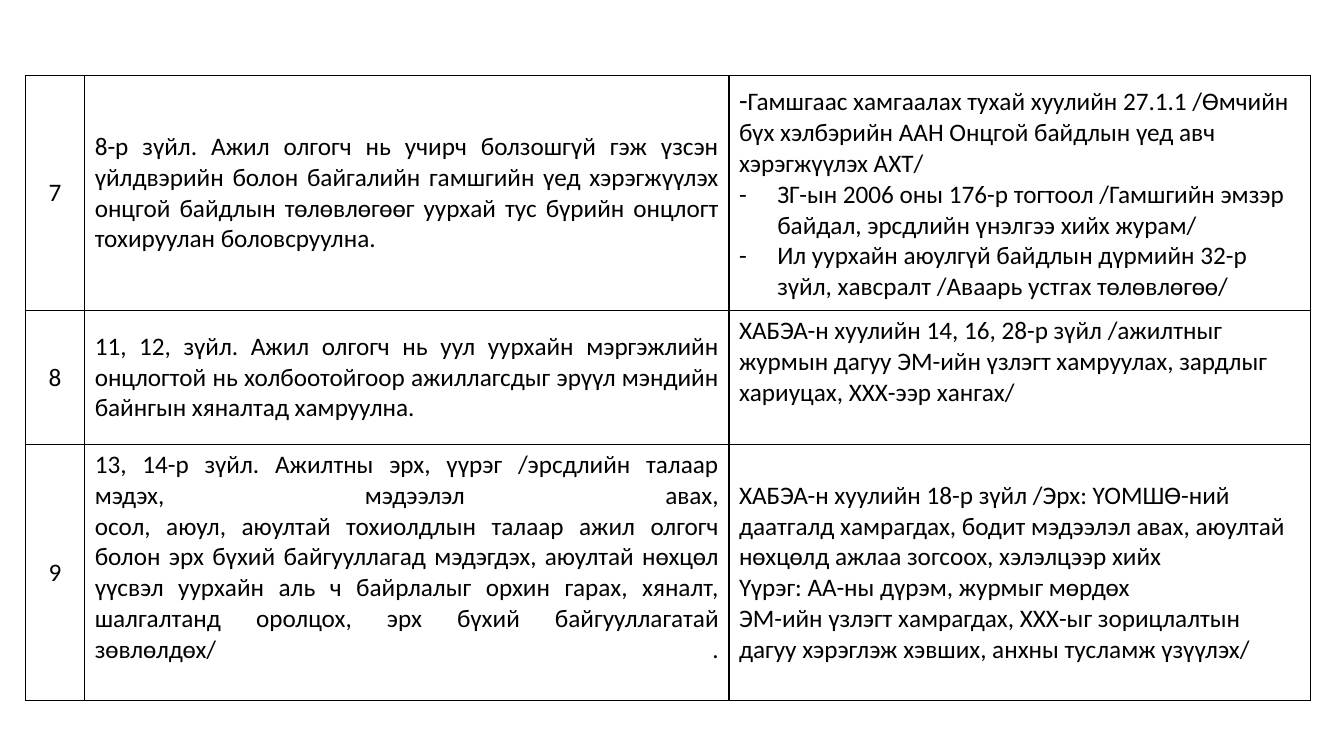
from dataclasses import dataclass

from lxml.etree import SubElement
from pptx import Presentation
from pptx.dml.color import RGBColor
from pptx.enum.text import MSO_ANCHOR as Anchor, PP_ALIGN as Align
from pptx.oxml import parse_xml
from pptx.oxml.ns import nsdecls, qn
from pptx.table import Table, _Cell as Cell
from pptx.text.text import _Paragraph as Paragraph
from pptx.util import Inches, Pt


@dataclass(frozen=True)
class Theme:
    font: str = "Calibri"
    ink: str = "000000"
    paper: str = "FFFFFF"
    body_size: float = 18
    dash_size: float = 20
    border_width: float = 1
    bullet_indent: float = 0.38


@dataclass(frozen=True)
class Line:
    text: str
    bullet: bool = False
    lead: str = ""  # larger characters before the text


@dataclass(frozen=True)
class LawRow:
    number: str
    height: float
    clause: str
    references: tuple[Line, ...]
    reference_anchor: Anchor = Anchor.MIDDLE


THEME = Theme()

# Grid in inches
SLIDE_WIDTH, SLIDE_HEIGHT = 13.33, 7.5
TABLE_LEFT, TABLE_TOP = 0.25, 0.75
COLUMN_WIDTHS = (0.59, 6.39, 5.77)

# Content
ROWS = (
    LawRow(
        "7", 2.33,
        "8-р зүйл. Ажил олгогч нь учирч болзошгүй гэж үзсэн үйлдвэрийн болон "
        "байгалийн гамшгийн үед хэрэгжүүлэх онцгой байдлын төлөвлөгөөг уурхай "
        "тус бүрийн онцлогт тохируулан боловсруулна.",
        (
            Line("Гамшгаас хамгаалах тухай хуулийн 27.1.1 /Өмчийн бүх хэлбэрийн "
                 "ААН Онцгой байдлын үед авч хэрэгжүүлэх АХТ/", lead="-"),
            Line("ЗГ-ын 2006 оны 176-р тогтоол /Гамшгийн эмзэр байдал, эрсдлийн "
                 "үнэлгээ хийх журам/", bullet=True),
            Line("Ил уурхайн аюулгүй байдлын дүрмийн 32-р зүйл, хавсралт "
                 "/Аваарь устгах төлөвлөгөө/", bullet=True),
        ),
    ),
    LawRow(
        "8", 1.33,
        "11, 12, зүйл. Ажил олгогч нь уул уурхайн мэргэжлийн онцлогтой нь "
        "холбоотойгоор ажиллагсдыг эрүүл мэндийн байнгын хяналтад хамруулна.",
        (
            Line("ХАБЭА-н хуулийн 14, 16, 28-р зүйл /ажилтныг журмын дагуу "
                 "ЭМ-ийн үзлэгт хамруулах, зардлыг хариуцах, ХХХ-ээр хангах/"),
        ),
        reference_anchor=Anchor.TOP,
    ),
    LawRow(
        "9", 2.54,
        "13, 14-р зүйл. Ажилтны эрх, үүрэг /эрсдлийн талаар мэдэх, мэдээлэл авах,\n"
        "осол, аюул, аюултай тохиолдлын талаар ажил олгогч болон эрх бүхий "
        "байгууллагад мэдэгдэх, аюултай нөхцөл үүсвэл уурхайн аль ч байрлалыг "
        "орхин гарах, хяналт, шалгалтанд оролцох, эрх бүхий байгууллагатай "
        "зөвлөлдөх/ .\n",
        (
            Line("ХАБЭА-н хуулийн 18-р зүйл /Эрх: ҮОМШӨ-ний даатгалд хамрагдах, "
                 "бодит мэдээлэл авах, аюултай нөхцөлд ажлаа зогсоох, хэлэлцээр хийх"),
            Line("Үүрэг: АА-ны дүрэм, журмыг мөрдөх"),
            Line("ЭМ-ийн үзлэгт хамрагдах, ХХХ-ыг зорицлалтын дагуу хэрэглэж "
                 "хэвших, анхны тусламж үзүүлэх/"),
        ),
    ),
)


def add_text(paragraph: Paragraph, text: str, *, size: float = THEME.body_size,
             color: str = THEME.ink, font: str = THEME.font) -> None:
    """Add formatted text; a newline becomes a line break."""
    for index, part in enumerate(text.split("\n")):
        if index:
            paragraph.add_line_break()
        if part:
            run = paragraph.add_run()
            run.text = part
            run.font.size = Pt(size)
            run.font.name = font
            run.font.color.rgb = RGBColor.from_string(color)


def add_bullet(paragraph: Paragraph) -> None:
    properties = paragraph._p.get_or_add_pPr()
    indent = Inches(THEME.bullet_indent)
    properties.set("marL", str(indent))
    properties.set("indent", str(-indent))
    SubElement(properties, qn("a:buFont"), typeface=THEME.font)
    SubElement(properties, qn("a:buChar"), char="-")


def style_cell(cell: Cell, anchor: Anchor) -> None:
    cell.vertical_anchor = anchor
    cell.fill.solid()
    cell.fill.fore_color.rgb = RGBColor.from_string(THEME.paper)
    properties = cell._tc.get_or_add_tcPr()
    for index, side in enumerate("LRTB"):
        properties.insert(index, parse_xml(
            f'<a:ln{side} {nsdecls("a")} w="{Pt(THEME.border_width)}"><a:solidFill>'
            f'<a:srgbClr val="{THEME.ink}"/></a:solidFill></a:ln{side}>'))


def fill_cell(cell: Cell, lines: tuple[Line, ...], *, align: Align = Align.LEFT,
              anchor: Anchor = Anchor.MIDDLE) -> None:
    style_cell(cell, anchor)
    frame = cell.text_frame
    for index, line in enumerate(lines):
        paragraph = frame.add_paragraph() if index else frame.paragraphs[0]
        paragraph.alignment = align
        if line.bullet:
            add_bullet(paragraph)
        add_text(paragraph, line.lead, size=THEME.dash_size)
        add_text(paragraph, line.text)


def fill_row(table: Table, index: int, row: LawRow) -> None:
    table.rows[index].height = Inches(row.height)
    number, clause, references = table.rows[index].cells
    fill_cell(number, (Line(row.number),), align=Align.CENTER)
    fill_cell(clause, (Line(row.clause),), align=Align.JUSTIFY)
    fill_cell(references, row.references, anchor=row.reference_anchor)


def main() -> None:
    presentation = Presentation()
    presentation.slide_width = Inches(SLIDE_WIDTH)
    presentation.slide_height = Inches(SLIDE_HEIGHT)
    slide = presentation.slides.add_slide(presentation.slide_layouts[6])

    # Table of law clauses and their references
    table = slide.shapes.add_table(
        len(ROWS), len(COLUMN_WIDTHS), Inches(TABLE_LEFT), Inches(TABLE_TOP),
        Inches(sum(COLUMN_WIDTHS)), Inches(sum(row.height for row in ROWS))).table
    table.first_row = table.horz_banding = False
    for column, width in zip(table.columns, COLUMN_WIDTHS):
        column.width = Inches(width)
    for index, row in enumerate(ROWS):
        fill_row(table, index, row)

    presentation.save("out.pptx")


if __name__ == "__main__":
    main()
